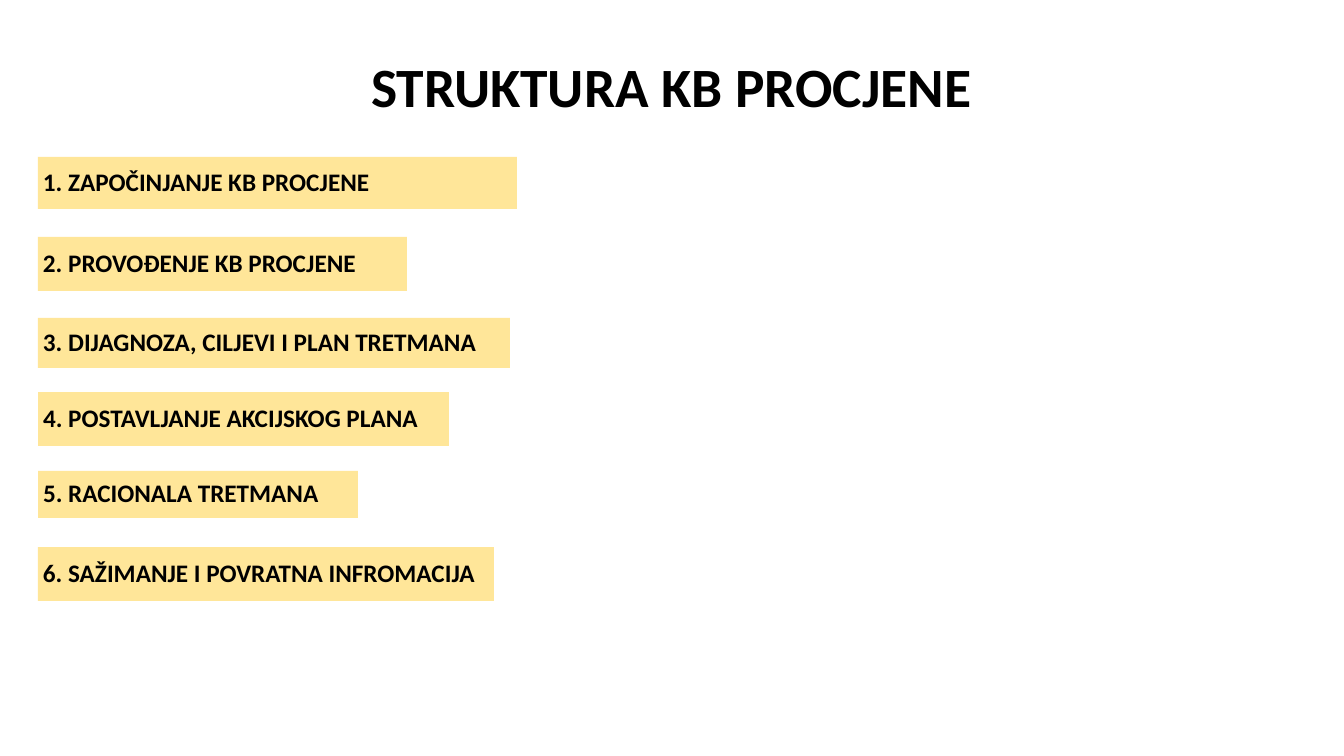
from pptx import Presentation
from pptx import util as u
from pptx.dml.color import RGBColor
from pptx.enum import shapes, text

# Content
TITLE = "STRUKTURA KB PROCJENE"
STEPS = [  # wording, top, width, height in px
    ("ZAPOČINJANJE KB PROCJENE", 157, 479, 52),
    ("PROVOĐENJE KB PROCJENE", 237, 369, 54),
    ("DIJAGNOZA, CILJEVI I PLAN TRETMANA", 318, 472, 50),
    ("POSTAVLJANJE AKCIJSKOG PLANA", 392, 411, 54),
    ("RACIONALA TRETMANA", 471, 320, 47),
    ("SAŽIMANJE I POVRATNA INFROMACIJA", 547, 456, 54),
]

# Layout and theme
PX_PER_INCH = 100.8
SLIDE_WIDTH, SLIDE_HEIGHT = 1344, 756
LEFT = 38
TITLE_BOX = (LEFT, 58, 1267, 63)
THEME = {
    "font": "Calibri",
    "ink": RGBColor.from_string("000000"),
    "bar": RGBColor.from_string("FFE699"),
    "title_size": 39.6,
    "step_size": 18,
}


def px(length):
    return u.Inches(length / PX_PER_INCH)


def write(shape, wording, *, size, align, inset=5):
    frame = shape.text_frame
    frame.word_wrap = True
    frame.vertical_anchor = text.MSO_ANCHOR.MIDDLE
    frame.margin_left = frame.margin_right = px(inset)
    frame.margin_top = frame.margin_bottom = px(inset)
    paragraph = frame.paragraphs[0]
    paragraph.alignment = align
    paragraph.line_spacing = 0.9
    run = paragraph.add_run()
    run.text = wording
    run.font.name = THEME["font"]
    run.font.size = u.Pt(size)
    run.font.bold = True
    run.font.color.rgb = THEME["ink"]


def add_step(slide, wording, top, width, height):
    bar = slide.shapes.add_shape(
        shapes.MSO_SHAPE.RECTANGLE, px(LEFT), px(top), px(width), px(height))
    bar.shadow.inherit = False
    bar.fill.solid()
    bar.fill.fore_color.rgb = THEME["bar"]
    bar.line.fill.background()
    write(bar, wording, size=THEME["step_size"], align=text.PP_ALIGN.LEFT)


def main():
    presentation = Presentation()
    presentation.slide_width = px(SLIDE_WIDTH)
    presentation.slide_height = px(SLIDE_HEIGHT)
    slide = presentation.slides.add_slide(presentation.slide_layouts[6])

    # Title
    title = slide.shapes.add_textbox(*map(px, TITLE_BOX))
    write(title, TITLE, size=THEME["title_size"], align=text.PP_ALIGN.CENTER)

    # Numbered steps
    for number, (wording, *box) in enumerate(STEPS, start=1):
        add_step(slide, f"{number}. {wording}", *box)

    presentation.save("out.pptx")


if __name__ == "__main__":
    main()
